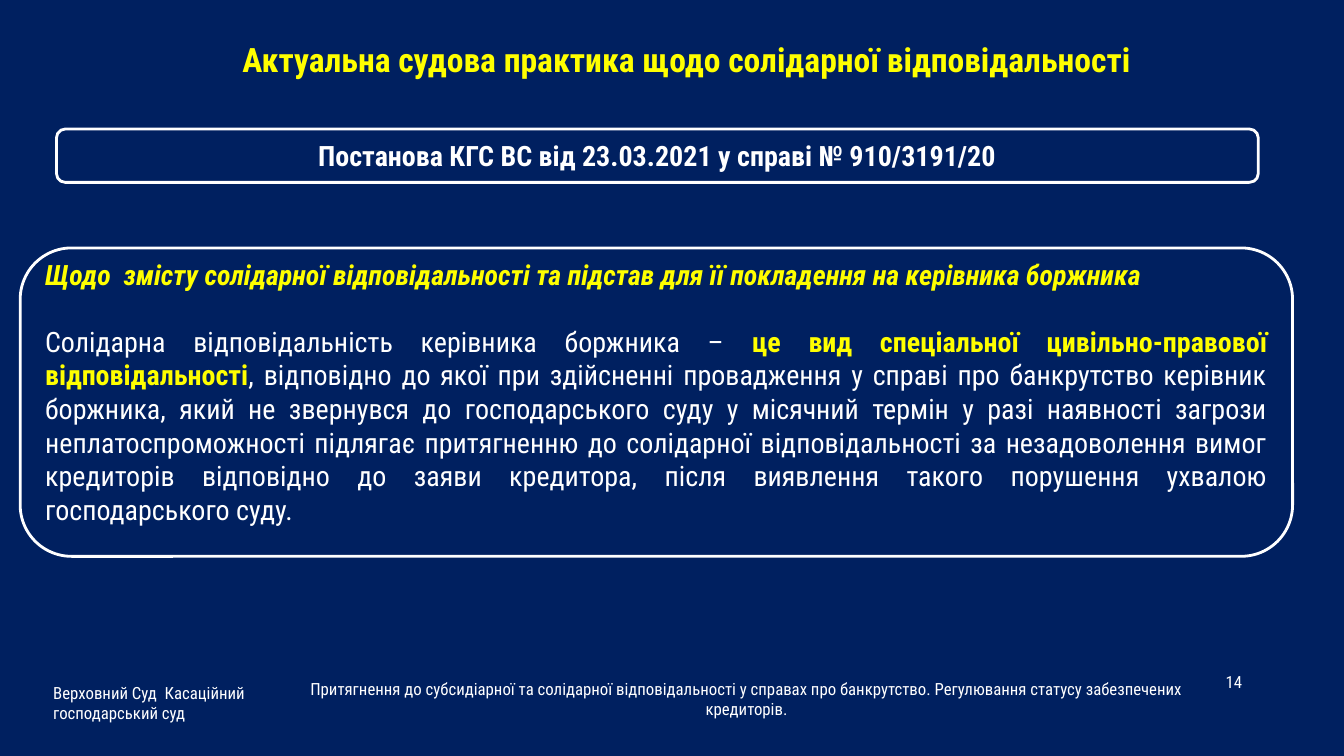
from dataclasses import dataclass

from pptx import Presentation
from pptx.dml.color import RGBColor
from pptx.enum.shapes import MSO_SHAPE as Shape
from pptx.enum.text import MSO_ANCHOR as Anchor, PP_ALIGN as Align
from pptx.util import Inches, Pt


@dataclass(frozen=True)
class Theme:
    font: str = "Roboto Condensed"
    navy: RGBColor = RGBColor(0x00, 0x20, 0x60)
    white: RGBColor = RGBColor(0xFF, 0xFF, 0xFF)
    yellow: RGBColor = RGBColor(0xFF, 0xFF, 0x00)
    title: int = 24
    body: int = 20
    footer: int = 12
    outline: int = 2


theme = Theme()

prs = Presentation()
prs.slide_width, prs.slide_height = Inches(13.33), Inches(7.5)
slide = prs.slides.add_slide(prs.slide_layouts[6])
slide.background.fill.solid()
slide.background.fill.fore_color.rgb = theme.navy


def format_text(paragraph, size, color, align, bold=False, italic=False):
    paragraph.alignment = align
    for run in paragraph.runs:
        font = run.font
        font.name, font.size = theme.font, Pt(size)
        font.color.rgb = color
        font.bold, font.italic = bold, italic


def add_panel(left, top, width, height):
    """Add a navy rounded panel with a white outline and return its text frame."""
    panel = slide.shapes.add_shape(
        Shape.ROUNDED_RECTANGLE, Inches(left), Inches(top), Inches(width), Inches(height))
    panel.shadow.inherit = False
    panel.fill.solid()
    panel.fill.fore_color.rgb = theme.navy
    panel.line.color.rgb = theme.white
    panel.line.width = Pt(theme.outline)
    panel.text_frame.word_wrap = True
    panel.text_frame.vertical_anchor = Anchor.MIDDLE
    return panel.text_frame


# Title and footer
labels = [
    ("Актуальна судова практика щодо солідарної відповідальності",
     (0.84, 0.34, 11.94, 0.5), theme.title, theme.yellow, Align.CENTER, Anchor.TOP, True),
    ("Верховний Суд  Касаційний господарський суд",
     (0.43, 6.6, 2.54, 0.75), theme.footer, theme.white, Align.LEFT, Anchor.MIDDLE, False),
    ("Притягнення до субсидіарної та солідарної відповідальності у справах про банкрутство. "
     "Регулювання статусу забезпечених кредиторів.",
     (2.64, 6.7, 9.53, 0.46), theme.footer, theme.white, Align.CENTER, Anchor.MIDDLE, False),
    ("14", (9.42, 6.6, 3, 0.33), theme.footer, theme.white, Align.RIGHT, Anchor.MIDDLE, False),
]
for wording, box, size, color, align, anchor, bold in labels:
    label = slide.shapes.add_textbox(*(Inches(value) for value in box)).text_frame
    label.word_wrap = True
    label.vertical_anchor = anchor
    label.text = wording
    format_text(label.paragraphs[0], size, color, align, bold)

# Court ruling
ruling = add_panel(0.56, 1.28, 11.92, 0.53)
ruling.text = "Постанова КГС ВС від 23.03.2021 у справі № 910/3191/20"
format_text(ruling.paragraphs[0], theme.body, theme.white, Align.CENTER, bold=True)

# Legal position
position = add_panel(0.2, 2.46, 12.62, 3.06)
position.margin_top, position.margin_bottom = Inches(0), Inches(0.21)
position.text = ("Щодо  змісту солідарної відповідальності та підстав "
                 "для її покладення на керівника боржника")
heading = position.paragraphs[0]
heading.space_after = Pt(24)
format_text(heading, theme.body, theme.yellow, Align.JUSTIFY, bold=True, italic=True)

definition = position.add_paragraph()
for wording in (
    "Солідарна відповідальність керівника боржника – ",
    "це вид спеціальної цивільно-правової відповідальності",
    ", відповідно до якої при здійсненні провадження у справі про банкрутство керівник "
    "боржника, який не звернувся до господарського суду у місячний термін у разі наявності "
    "загрози неплатоспроможності підлягає притягненню до солідарної відповідальності за "
    "незадоволення вимог кредиторів відповідно до заяви кредитора, після виявлення такого "
    "порушення ухвалою господарського суду.",
):
    definition.add_run().text = wording
format_text(definition, theme.body, theme.white, Align.JUSTIFY)
key_phrase = definition.runs[1].font
key_phrase.bold = True
key_phrase.color.rgb = theme.yellow

prs.save("out.pptx")
